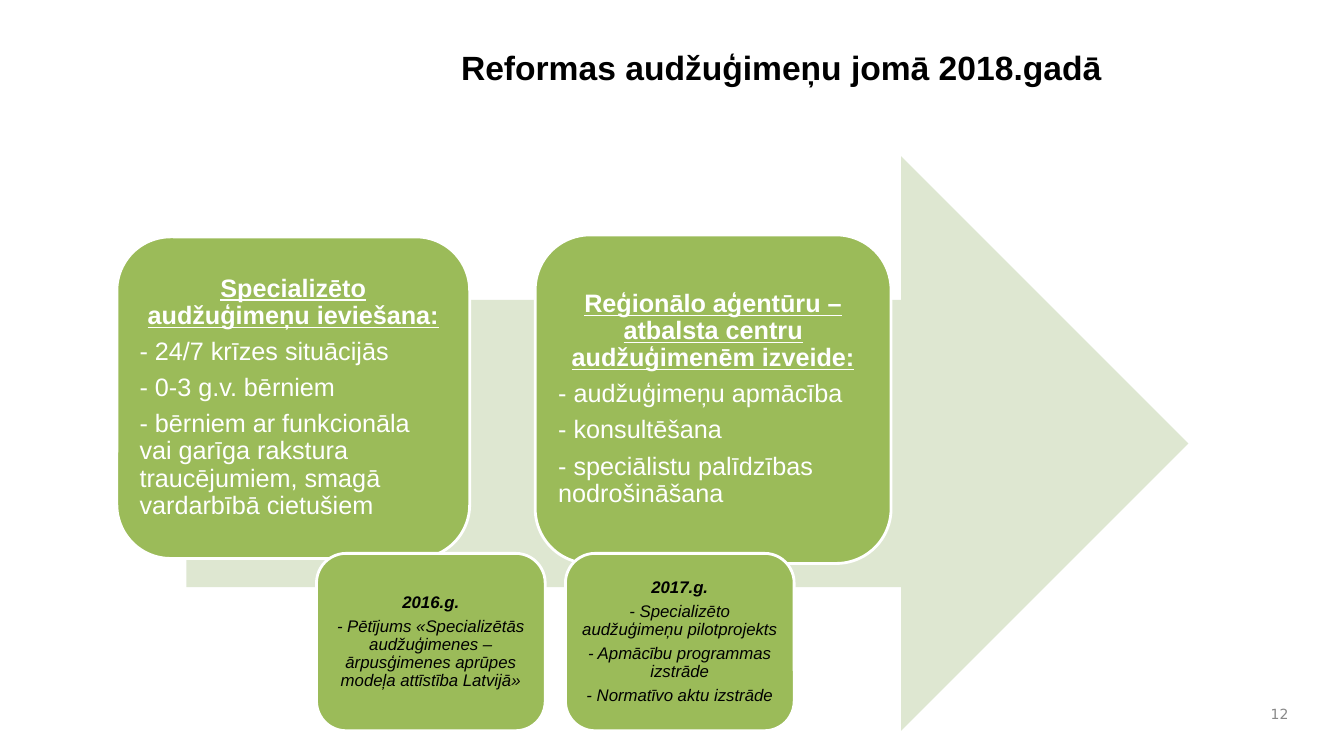
"""Build the slide on foster family reforms in 2018."""
import pptx
import pptx.dml.color
import pptx.enum.shapes
import pptx.enum.text
import pptx.util

Pt = pptx.util.Pt
SHAPE = pptx.enum.shapes.MSO_SHAPE
ALIGN = pptx.enum.text.PP_ALIGN
ANCHOR = pptx.enum.text.MSO_ANCHOR

COLOURS = {
    "arrow": "DEE7D1",
    "card": "9BBB59",
    "white": "FFFFFF",
    "black": "000000",
    "number": "898989",
}

REFORMS = [
    ((83.5, 169.2, 252, 229.7), "Specializēto audžuģimeņu ieviešana:", [
        "- 24/7 krīzes situācijās",
        "- 0-3 g.v. bērniem",
        "- bērniem ar funkcionāla vai garīga rakstura traucējumiem, "
        "smagā vardarbībā cietušiem",
    ]),
    ((382.3, 167.8, 254.2, 234.7),
     "Reģionālo aģentūru – atbalsta centru audžuģimenēm izveide:", [
        "- audžuģimeņu apmācība",
        "- konsultēšana",
        "- speciālistu palīdzības nodrošināšana",
    ]),
]

YEARS = [
    ((403.9, 395.3, 163.4, 126.7), "2017.g.", [
        "- Specializēto audžuģimeņu pilotprojekts",
        "- Apmācību programmas izstrāde",
        "- Normatīvo aktu izstrāde",
    ]),
    ((226.1, 395.3, 163.4, 126.7), "2016.g.", [
        "- Pētījums «Specializētās audžuģimenes – ārpusģimenes aprūpes "
        "modeļa attīstība Latvijā»",
    ]),
]


def colour(name):
    """Return the named colour."""
    return pptx.dml.color.RGBColor.from_string(COLOURS[name])


def set_frame(frame, anchor, side, top):
    """Wrap a text frame and set its anchor and margins."""
    frame.word_wrap = True
    frame.vertical_anchor = anchor
    frame.margin_left = frame.margin_right = Pt(side)
    frame.margin_top = frame.margin_bottom = Pt(top)


def add_span(para, text, size, tone, face="Arial", **styles):
    """Add one formatted run to a paragraph."""
    span = para.add_run()
    span.text = text
    span.font.name = face
    span.font.size = Pt(size)
    span.font.color.rgb = colour(tone)
    for style, value in styles.items():
        setattr(span.font, style, value)


def add_label(page, place, text, size, tone, align, anchor, **styles):
    """Add a text box holding a single line."""
    box = page.shapes.add_textbox(*map(Pt, place))
    set_frame(box.text_frame, anchor, 7.2, 3.6)
    para = box.text_frame.paragraphs[0]
    para.alignment = align
    add_span(para, text, size, tone, **styles)


def add_block(page, kind, place, fill):
    """Add a filled shape without outline or shadow."""
    block = page.shapes.add_shape(kind, *map(Pt, place))
    block.shadow.inherit = False
    block.fill.solid()
    block.fill.fore_color.rgb = colour(fill)
    block.line.fill.background()
    return block


def add_card(page, place, heading, items, size, tone, margin, align, underline, italic):
    """Add a rounded card with a bold heading and its items."""
    card = add_block(page, SHAPE.ROUNDED_RECTANGLE, place, "card")
    card.line.color.rgb = colour("white")
    card.line.width = Pt(2)
    frame = card.text_frame
    set_frame(frame, ANCHOR.MIDDLE, margin, margin)
    for index, text in enumerate([heading, *items]):
        first = index == 0
        para = frame.paragraphs[0] if first else frame.add_paragraph()
        para.alignment = ALIGN.CENTER if first else align
        para.line_spacing = 0.9
        para.space_after = Pt(size * 0.35)
        add_span(para, text, size, tone, bold=first,
                 underline=first and underline, italic=italic)


def main():
    """Build and save the deck."""
    deck = pptx.Presentation()
    deck.slide_width, deck.slide_height = Pt(960), Pt(540)
    page = deck.slides.add_slide(deck.slide_layouts[6])
    add_label(page, (203.8, 30.2, 708.5, 81.4), "Reformas audžuģimeņu jomā 2018.gadā",
              24, "black", ALIGN.CENTER, ANCHOR.TOP, bold=True)
    add_block(page, SHAPE.RIGHT_ARROW, (133.2, 111.6, 715.7, 410.4), "arrow")
    for place, heading, items in REFORMS:
        add_card(page, place, heading, items, 18, "white", 5, ALIGN.LEFT, True, False)
    for place, heading, items in YEARS:
        add_card(page, place, heading, items, 12, "black", 3.6, ALIGN.CENTER, False, True)
    add_label(page, (895.7, 498.2, 31.7, 23.8), "12", 10, "number",
              ALIGN.RIGHT, ANCHOR.MIDDLE, face="DejaVu Sans")
    deck.save("out.pptx")


if __name__ == "__main__":
    main()
